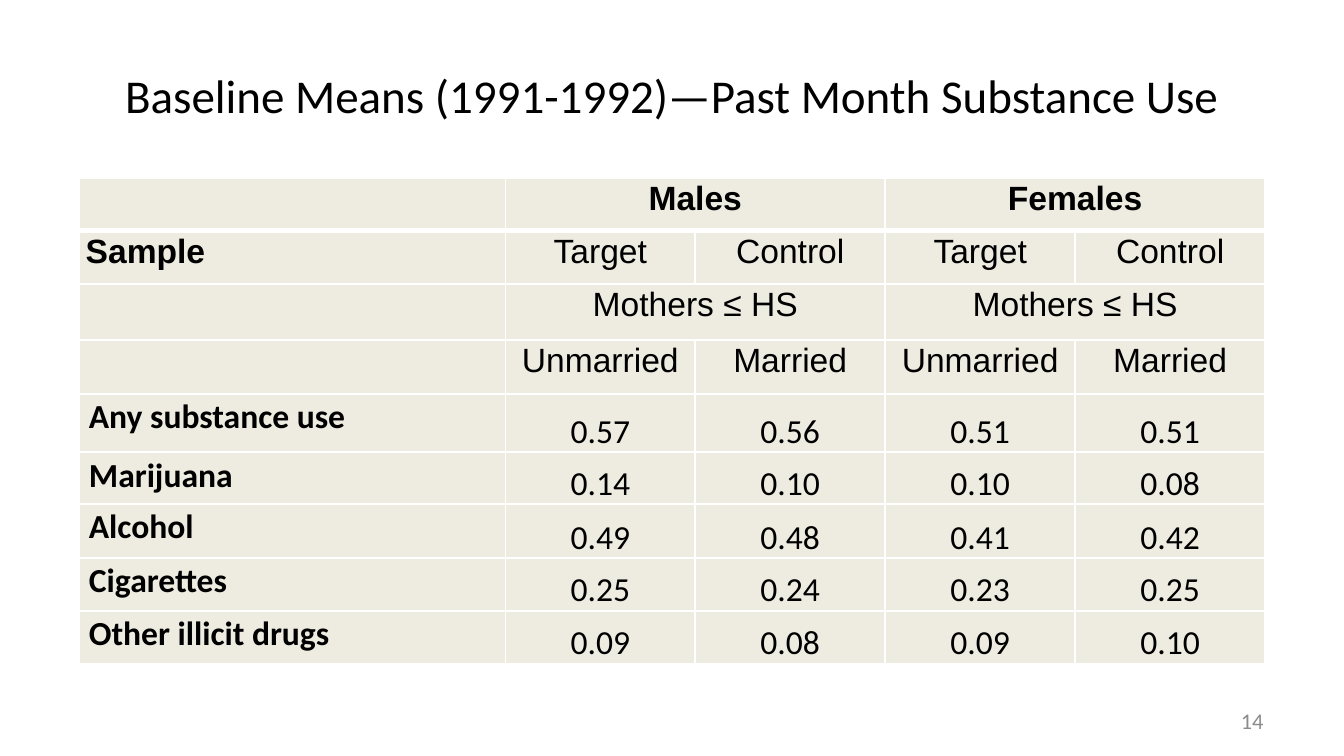
import pptx
import pptx.dml.color
import pptx.enum.text
import pptx.util
import lxml.etree
from pptx.oxml.ns import qn

Cm, Pt = pptx.util.Cm, pptx.util.Pt
Align, Anchor = pptx.enum.text.PP_ALIGN, pptx.enum.text.MSO_ANCHOR
COLORS = {"text": "000000", "cell": "EEECE1", "border": "FFFFFF", "number": "8C8C8C"}


def style(para, face, size, color, align, bold=False):
    para.alignment = align
    para.font.name = face
    para.font.size = Pt(size)
    para.font.bold = bold
    para.font.color.rgb = pptx.dml.color.RGBColor.from_string(COLORS[color])


def add_border(cell, side, points):
    line = lxml.etree.SubElement(cell._tc.get_or_add_tcPr(), qn("a:" + side), w=str(Pt(points)))
    fill = lxml.etree.SubElement(line, qn("a:solidFill"))
    lxml.etree.SubElement(fill, qn("a:srgbClr"), val=COLORS["border"])


deck = pptx.Presentation()
deck.slide_width, deck.slide_height = Cm(25.4), Cm(14.28)
page = deck.slides.add_slide(deck.slide_layouts[5])

# Title
title = page.shapes.title
title.left, title.top, title.width, title.height = Cm(1.27), Cm(0.58), Cm(22.86), Cm(2.4)
title.text_frame.text = "Baseline Means (1991-1992)—Past Month Substance Use"
title.text_frame.vertical_anchor = Anchor.MIDDLE
style(title.text_frame.paragraphs[0], "Calibri", 25.2, "text", Align.CENTER)

# Table contents: four heading rows, then the means
group_names = ["Males", "Females"]
rows = [
    ["", group_names[0], "", group_names[1], ""],
    ["Sample"] + ["Target", "Control"] * 2,
    [""] + ["Mothers ≤ HS", ""] * 2,
    [""] + ["Unmarried", "Married"] * 2,
    ["Any substance use", "0.57", "0.56", "0.51", "0.51"],
    ["Marijuana", "0.14", "0.10", "0.10", "0.08"],
    ["Alcohol", "0.49", "0.48", "0.41", "0.42"],
    ["Cigarettes", "0.25", "0.24", "0.23", "0.25"],
    ["Other illicit drugs", "0.09", "0.08", "0.09", "0.10"],
]
heading_rows = 4
row_heights = [1.0, 1.0, 1.06, 1.02, 1.1, 0.98, 1.02, 1.0, 0.99]
column_widths = [8.05] + [3.59] * 4

# Table grid
frame = page.shapes.add_table(len(rows), len(column_widths), Cm(1.5), Cm(3.36),
                              Cm(sum(column_widths)), Cm(sum(row_heights)))
table = frame.table
table.first_row = table.horz_banding = False
for column, width in zip(table.columns, column_widths):
    column.width = Cm(width)
for row, height in zip(table.rows, row_heights):
    row.height = Cm(height)
for r in (0, 2):
    for c in (1, 3):
        table.cell(r, c).merge(table.cell(r, c + 1))

# Table cells
for r, texts in enumerate(rows):
    heading = r < heading_rows
    for c, text in enumerate(texts):
        cell = table.cell(r, c)
        mean = not heading and c > 0
        cell.margin_left = cell.margin_right = Cm(0.12 if heading else 0.18)
        cell.margin_top = cell.margin_bottom = 0
        cell.vertical_anchor = Anchor.BOTTOM if mean else Anchor.TOP
        for side in ("lnL", "lnR", "lnT", "lnB"):
            thick = (r, side) in ((0, "lnB"), (1, "lnT"))
            add_border(cell, side, 3 if thick else 1)
        cell.fill.solid()
        cell.fill.fore_color.rgb = pptx.dml.color.RGBColor.from_string(COLORS["cell"])
        if text:
            cell.text = text
            para = cell.text_frame.paragraphs[0]
            para.line_spacing = 1.15 if mean else 1.07
            style(para, "Arial" if heading else "Calibri", 18, "text",
                  Align.CENTER if c else Align.LEFT, bold=c == 0 or r == 0)

# Page number
box = page.shapes.add_textbox(Cm(18.2), Cm(13.23), Cm(5.93), Cm(0.76))
box.text_frame.word_wrap = True
box.text_frame.vertical_anchor = Anchor.MIDDLE
box.text_frame.text = "14"
style(box.text_frame.paragraphs[0], "Calibri", 12, "number", Align.RIGHT)

deck.save("out.pptx")
